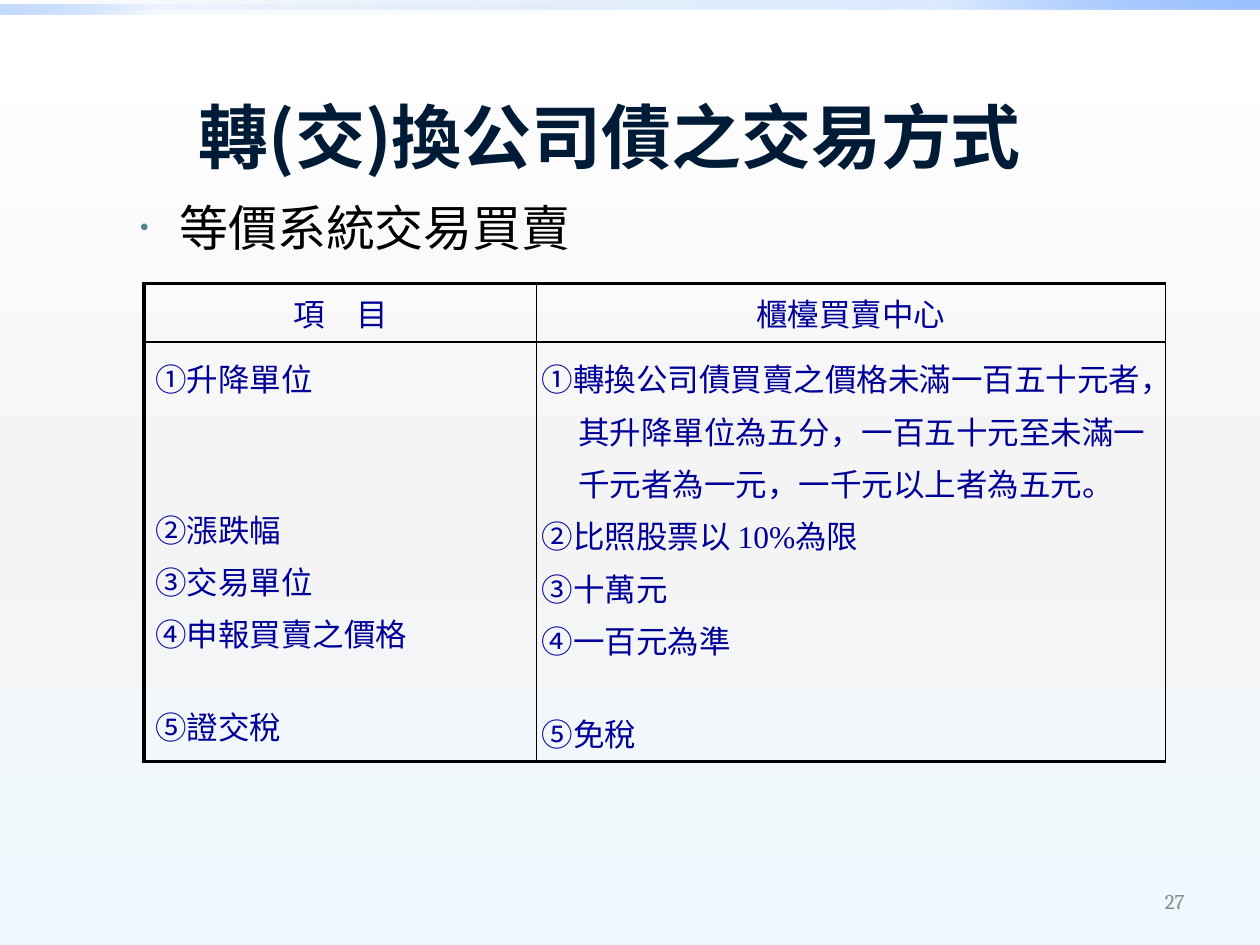
from dataclasses import dataclass

from lxml import etree
from pptx import Presentation
from pptx import util as u
from pptx.dml.color import RGBColor
from pptx.enum import shapes, text
from pptx.oxml.ns import qn


@dataclass(frozen=True)
class Theme:
    title_color: str = "001B36"
    body_color: str = "000000"
    bullet_color: str = "51848E"
    table_color: str = "000099"
    border_color: str = "000000"
    number_color: str = "8C8C8C"
    heading_font: str = "Noto Sans CJK SC"
    table_font: str = "Times New Roman"
    asian_font: str = "Noto Sans CJK TC"
    number_font: str = "Cambria"
    title_size: int = 40
    body_size: int = 28
    table_size: int = 18
    number_size: int = 12
    thick: float = 2.25
    thin: float = 1
    background: tuple = ((0, "FFFFFF", 100), (55, "F4F4F4", 100), (100, "EEF9FF", 100))
    top_bar: tuple = ((0, "0058B7", 0), (75, "4F95FF", 20), (100, "9EC2FF", 100))
    left_bar: tuple = ((0, "0058B7", 0), (75, "4F95FF", 5), (100, "9EC2FF", 60))


def add_child(parent, tag, **attributes):
    return etree.SubElement(parent, qn(tag), {k: str(v) for k, v in attributes.items()})


def write(para, words, *, font, size, color, asian=None, bold=False, align=None,
          before=0, spacing=None, margin=0, hanging=0):
    para.alignment = align
    para.space_before = u.Pt(before)
    para.line_spacing = spacing
    properties = para._p.get_or_add_pPr()
    properties.set("marL", str(u.Cm(margin)))
    properties.set("indent", str(-u.Cm(hanging)))
    span = para.add_run()
    span.text = words
    span.font.name = font
    span.font.size = u.Pt(size)
    span.font.bold = bold
    span.font.color.rgb = RGBColor.from_string(color)
    add_child(span._r.get_or_add_rPr(), "a:ea", typeface=asian or font)


def paint_gradient(owner, fill, stops, angle):
    fill.gradient()
    fill.gradient_angle = (360 - angle) % 360
    stop_list = owner.element.xpath(".//a:gradFill/a:gsLst")[0]
    for old in list(stop_list):
        stop_list.remove(old)
    for position, color, opacity in stops:
        stop = add_child(stop_list, "a:gs", pos=position * 1000)
        shade = add_child(stop, "a:srgbClr", val=color)
        if opacity < 100:
            add_child(shade, "a:alpha", val=opacity * 1000)


def place(box, left, top, width, height):
    box.left, box.top, box.width, box.height = map(u.Cm, (left, top, width, height))


class SlideBuilder:
    def __init__(self, deck, theme):
        self.theme = theme
        self.page = deck.slides.add_slide(deck.slide_layouts[1])
        paint_gradient(self.page, self.page.background.fill, theme.background, 90)

    def bar(self, top, width, stops, angle):
        box = self.page.shapes.add_shape(
            shapes.MSO_SHAPE.RECTANGLE, 0, u.Cm(top), u.Cm(width), u.Cm(0.2))
        box.shadow.inherit = False
        box.line.fill.background()
        paint_gradient(box, box.fill, stops, angle)

    def title(self, words, *position):
        box = self.page.shapes.title
        place(box, *position)
        box.text_frame.vertical_anchor = text.MSO_ANCHOR.MIDDLE
        write(box.text_frame.paragraphs[0], words, font=self.theme.heading_font,
              size=self.theme.title_size, color=self.theme.title_color, bold=True,
              align=text.PP_ALIGN.CENTER, margin=0.97, hanging=0.97)

    def bullet(self, words, *position):
        box = self.page.placeholders[1]
        place(box, *position)
        box.text_frame.auto_size = text.MSO_AUTO_SIZE.NONE
        para = box.text_frame.paragraphs[0]
        para.level = 1
        properties = para._p.get_or_add_pPr()
        add_child(add_child(properties, "a:buClr"), "a:srgbClr", val=self.theme.bullet_color)
        add_child(properties, "a:buSzPct", val=50000)
        add_child(properties, "a:buChar", char="•")
        write(para, words, font=self.theme.heading_font, size=self.theme.body_size,
              color=self.theme.body_color, margin=2.06, hanging=0.79)

    def number(self, words, *position):
        box = self.page.shapes.add_textbox(*map(u.Cm, position))
        box.text_frame.word_wrap = True
        box.text_frame.vertical_anchor = text.MSO_ANCHOR.MIDDLE
        write(box.text_frame.paragraphs[0], words, font=self.theme.number_font,
              size=self.theme.number_size, color=self.theme.number_color,
              align=text.PP_ALIGN.RIGHT)

    def cell_text(self, para, words, **layout):
        write(para, words, font=self.theme.table_font, asian=self.theme.asian_font,
              size=self.theme.table_size, color=self.theme.table_color, **layout)

    def borders(self, cell, **widths):
        properties = cell._tc.get_or_add_tcPr()
        for index, side in enumerate("LRTB"):
            line = etree.Element(qn(f"a:ln{side}"), w=str(u.Pt(widths[side])))
            fill = add_child(line, "a:solidFill")
            add_child(fill, "a:srgbClr", val=self.theme.border_color)
            properties.insert(index, line)

    def table(self, left, top, widths, heights, headers, columns):
        thick, thin = self.theme.thick, self.theme.thin
        grid = self.page.shapes.add_table(
            len(heights), len(widths), u.Cm(left), u.Cm(top),
            u.Cm(sum(widths)), u.Cm(sum(heights))).table
        grid.first_row = grid.horz_banding = False
        for column, width in zip(grid.columns, widths):
            column.width = u.Cm(width)
        for row, height in zip(grid.rows, heights):
            row.height = u.Cm(height)
        for index, (header, items) in enumerate(zip(headers, columns)):
            head, body = grid.cell(0, index), grid.cell(1, index)
            for cell in (head, body):
                cell.fill.background()
                self.borders(cell, L=thin if index else thick, R=thin,
                             T=thick if cell is head else thin,
                             B=thin if cell is head else thick)
            head.vertical_anchor = text.MSO_ANCHOR.MIDDLE
            self.cell_text(head.text_frame.paragraphs[0], header,
                           align=text.PP_ALIGN.CENTER)
            body.margin_left = body.margin_right = u.Cm(0.1 if index else 0.23)
            frame = body.text_frame
            for order, (words, before) in enumerate(items):
                para = frame.add_paragraph() if order else frame.paragraphs[0]
                self.cell_text(para, words, before=before, spacing=1.15,
                               margin=0.74, hanging=0.74)


def main():
    deck = Presentation()
    deck.slide_width, deck.slide_height = u.Cm(25.4), u.Cm(19.05)
    theme = Theme()
    slide = SlideBuilder(deck, theme)
    slide.bar(0, 25.4, theme.top_bar, 315)
    slide.bar(0.1, 12.7, theme.left_bar, 135)
    slide.title("轉(交)換公司債之交易方式", 1.5, 1.14, 21.59, 3.18)
    slide.bullet("等價系統交易買賣", 1.3, 3.86, 10.59, 1.45)
    slide.table(
        2.9, 5.72, (7.92, 12.67), (1.17, 8.45), ("項　目", "櫃檯買賣中心"),
        (
            (("①升降單位", 0), ("②漲跌幅", 56), ("③交易單位", 0),
             ("④申報買賣之價格", 0), ("⑤證交稅", 23)),
            (("①轉換公司債買賣之價格未滿一百五十元者，其升降單位為五分，"
              "一百五十元至未滿一千元者為一元，一千元以上者為五元。", 0),
             ("②比照股票以 10%為限", 0), ("③十萬元", 0),
             ("④一百元為準", 0), ("⑤免稅", 23)),
        ))
    slide.number("27", 18.21, 17.65, 5.92, 1.02)
    deck.save("out.pptx")


if __name__ == "__main__":
    main()
